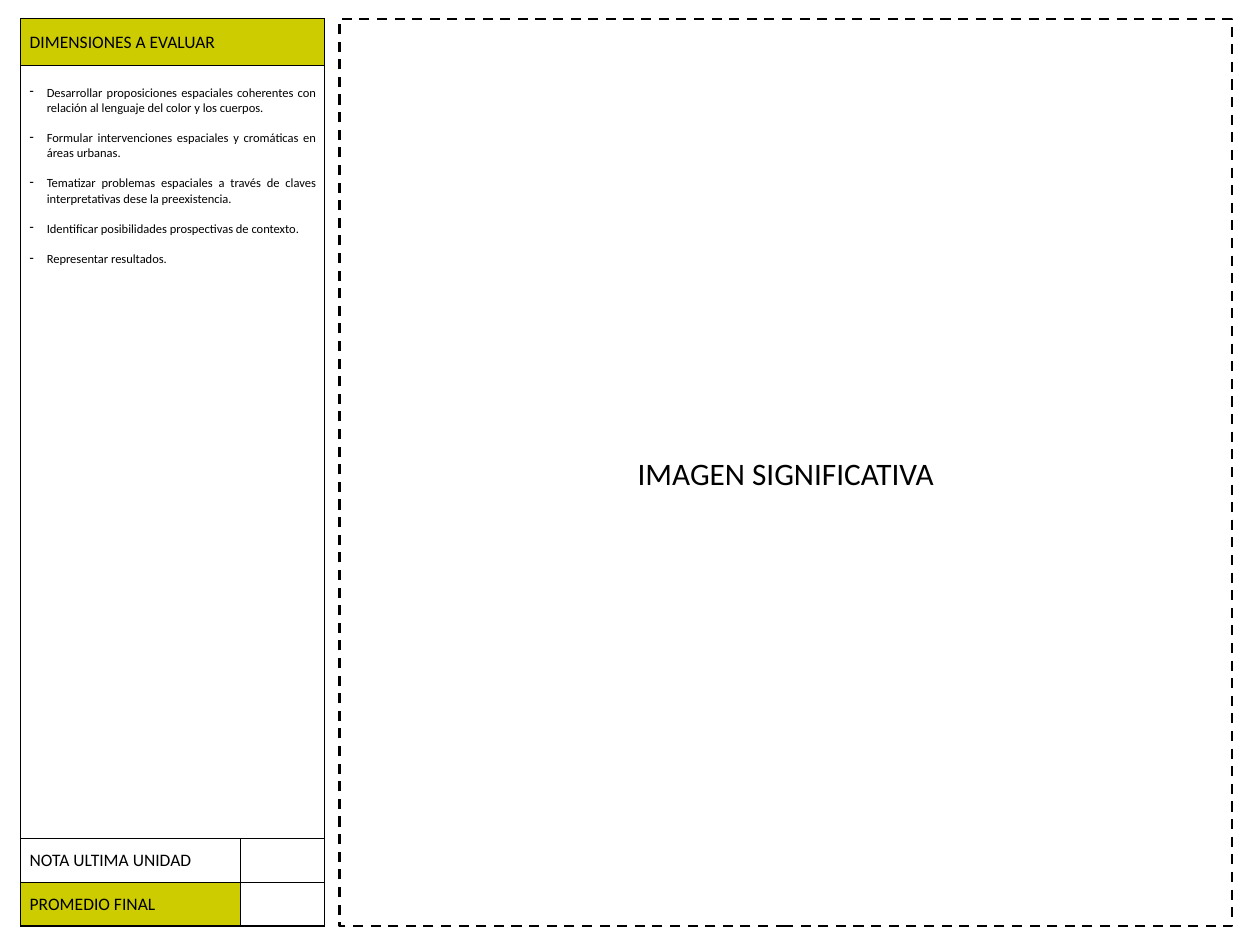
from dataclasses import dataclass
from typing import Optional

from lxml import etree
from pptx import Presentation
from pptx import util as u
from pptx.dml.color import RGBColor
from pptx.enum import dml, shapes, text
from pptx.oxml import ns

BLACK = RGBColor(0, 0, 0)
WHITE = RGBColor(255, 255, 255)
OLIVE = RGBColor(0xCC, 0xCC, 0)
FONT = "Calibri"
TOP, TALL = 0.21, 10.08
COLS = (2.44, 0.94)
ROWS = (0.52, 8.59, 0.49, 0.48)
GOALS = (
    "Desarrollar proposiciones espaciales coherentes con relación al lenguaje del color y los cuerpos.",
    "Formular intervenciones espaciales y cromáticas en áreas urbanas.",
    "Tematizar problemas espaciales a través de claves interpretativas dese la preexistencia.",
    "Identificar posibilidades prospectivas de contexto.",
    "Representar resultados.",
)


@dataclass
class Label:
    row: int
    words: str
    fill: RGBColor


LABELS = (
    Label(0, "DIMENSIONES A EVALUAR", OLIVE),
    Label(2, "NOTA ULTIMA UNIDAD", WHITE),
    Label(3, "PROMEDIO FINAL", OLIVE),
)


def write(para, words: str, size: float = 14, align=text.PP_ALIGN.JUSTIFY,
          gap: float = 0, bullet: Optional[str] = None) -> None:
    para.alignment = align
    para.space_before = u.Pt(gap)
    if bullet:
        props = para._p.get_or_add_pPr()
        props.set("marL", str(u.Inches(0.19)))
        props.set("indent", str(u.Inches(-0.19)))
        etree.SubElement(props, ns.qn("a:buChar")).set("char", bullet)
    run = para.add_run()
    run.text = words
    run.font.name = FONT
    run.font.size = u.Pt(size)
    run.font.bold = False
    run.font.color.rgb = BLACK


def edge(cell, width: float) -> None:
    props = cell._tc.get_or_add_tcPr()
    for spot, side in enumerate(("lnL", "lnR", "lnT", "lnB")):
        line = etree.Element(ns.qn(f"a:{side}"), w=str(u.Pt(width)))
        fill = etree.SubElement(line, ns.qn("a:solidFill"))
        etree.SubElement(fill, ns.qn("a:srgbClr")).set("val", str(BLACK))
        props.insert(spot, line)


def draw_frame(slide) -> None:
    box = slide.shapes.add_shape(
        shapes.MSO_SHAPE.RECTANGLE, u.Inches(3.77), u.Inches(TOP),
        u.Inches(9.92), u.Inches(TALL))
    box.shadow.inherit = False
    box.fill.background()
    box.line.color.rgb = BLACK
    box.line.width = u.Pt(2)
    box.line.dash_style = dml.MSO_LINE.DASH
    box.text_frame.vertical_anchor = text.MSO_ANCHOR.MIDDLE
    write(box.text_frame.paragraphs[0], "IMAGEN SIGNIFICATIVA", size=25,
          align=text.PP_ALIGN.CENTER)


def draw_table(slide) -> None:
    grid = slide.shapes.add_table(
        len(ROWS), len(COLS), u.Inches(0.23), u.Inches(TOP),
        u.Inches(sum(COLS)), u.Inches(TALL)).table
    grid.first_row = grid.horz_banding = False
    for col, wide in zip(grid.columns, COLS):
        col.width = u.Inches(wide)
    for row, high in zip(grid.rows, ROWS):
        row.height = u.Inches(high)
    for cell in grid.iter_cells():
        cell.fill.background()
        edge(cell, 1)
    for row in (0, 1):
        grid.cell(row, 0).merge(grid.cell(row, 1))
    for label in LABELS:
        cell = grid.cell(label.row, 0)
        cell.fill.solid()
        cell.fill.fore_color.rgb = label.fill
        cell.vertical_anchor = text.MSO_ANCHOR.MIDDLE
        write(cell.text_frame.paragraphs[0], label.words)
    cell = grid.cell(1, 0)
    cell.margin_top = u.Inches(0.22)
    frame = cell.text_frame
    for num, goal in enumerate(GOALS):
        para = frame.add_paragraph() if num else frame.paragraphs[0]
        write(para, goal, size=10, gap=12 if num else 0, bullet="-")


def main() -> None:
    deck = Presentation()
    deck.slide_width, deck.slide_height = u.Inches(14), u.Inches(10.5)
    slide = deck.slides.add_slide(deck.slide_layouts[6])
    draw_frame(slide)
    draw_table(slide)
    deck.save("out.pptx")


if __name__ == "__main__":
    main()
